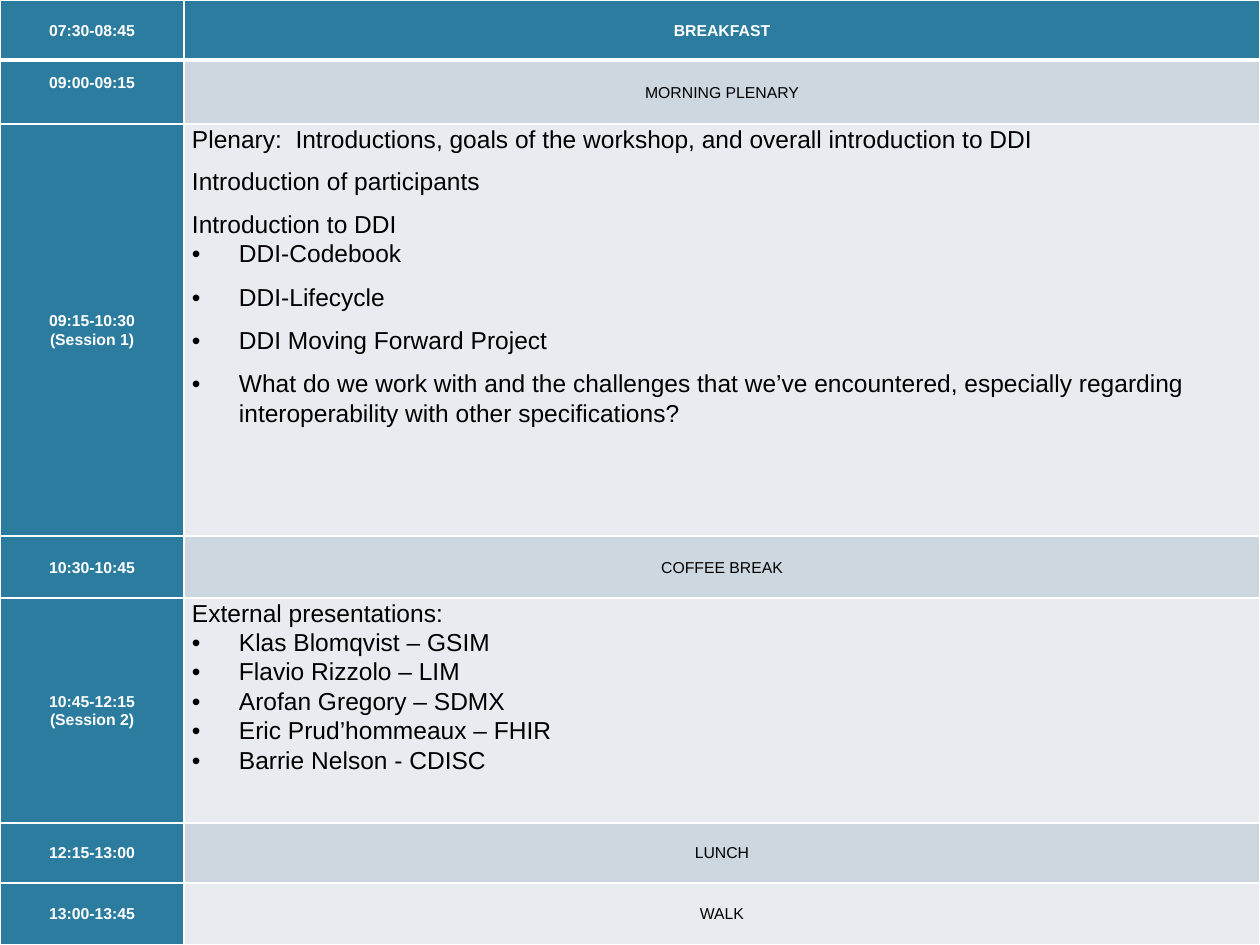
"""Build a one-slide workshop schedule as a two-column table."""
from lxml.etree import SubElement
from pptx import Presentation
from pptx.dml.color import RGBColor
from pptx.enum.text import MSO_ANCHOR, PP_ALIGN
from pptx.oxml.ns import qn
from pptx.util import Pt

PX = 914400 // 126
COLORS = {"teal": "2C7C9F", "band": "CDD7DF", "light": "E8ECF0",
          "white": "FFFFFF", "black": "000000"}


def add_text(tf, text, size=9, color="black", bold=False, align=PP_ALIGN.CENTER,
             before=0, after=0, bullet=False):
    p = tf.paragraphs[0]
    if p.runs:
        p = tf.add_paragraph()
    p.alignment = align
    p.line_spacing = 1.07
    p.space_before, p.space_after = Pt(before), Pt(after)
    if bullet:
        pPr = p._p.get_or_add_pPr()
        pPr.set("marL", str(47 * PX))
        pPr.set("indent", str(-47 * PX))
        SubElement(pPr, qn("a:buFont"), typeface="Arial")
        SubElement(pPr, qn("a:buChar"), char="•")
    r = p.add_run()
    r.text = text
    r.font.name, r.font.size, r.font.bold = "Arial", Pt(size), bold
    r.font.color.rgb = RGBColor.from_string(COLORS[color])


def style_cell(cell, fill, bottom=1):
    cell.margin_left = cell.margin_right = 8 * PX
    cell.margin_top = cell.margin_bottom = 0
    cell.vertical_anchor = MSO_ANCHOR.MIDDLE
    tcPr = cell._tc.get_or_add_tcPr()
    for side, width in (("L", 1), ("R", 1), ("T", 1), ("B", bottom)):
        ln = SubElement(tcPr, qn(f"a:ln{side}"), w=str(Pt(width)))
        SubElement(SubElement(ln, qn("a:solidFill")), qn("a:srgbClr"), val=COLORS["white"])
    cell.fill.solid()
    cell.fill.fore_color.rgb = RGBColor.from_string(COLORS[fill])


rows = [
    (60, ["07:30-08:45"], "BREAKFAST", "teal"),
    (64, ["09:00-09:15"], "MORNING PLENARY", "band"),
    (412, ["09:15-10:30", "(Session 1)"], None, "light"),
    (62, ["10:30-10:45"], "COFFEE BREAK", "band"),
    (225, ["10:45-12:15", "(Session 2)"], None, "light"),
    (60, ["12:15-13:00"], "LUNCH", "band"),
    (62, ["13:00-13:45"], "WALK", "light"),
]
sessions = {
    2: (["Plenary:  Introductions, goals of the workshop, and overall introduction to DDI",
         "Introduction of participants",
         "Introduction to DDI"],
        ["DDI-Codebook",
         "DDI-Lifecycle",
         "DDI Moving Forward Project",
         "What do we work with and the challenges that we’ve encountered, "
         "especially regarding interoperability with other specifications?"],
        7.5, 8),
    4: (["External presentations:"],
        ["Klas Blomqvist – GSIM",
         "Flavio Rizzolo – LIM",
         "Arofan Gregory – SDMX",
         "Eric Prud’hommeaux – FHIR",
         "Barrie Nelson - CDISC"],
        0, 0),
}

prs = Presentation()
prs.slide_width, prs.slide_height = 1260 * PX, 945 * PX
s = prs.slides.add_slide(prs.slide_layouts[6])
table = s.shapes.add_table(len(rows), 2, 0, 0, 1260 * PX, 945 * PX).table
table.horz_banding = False
for col, width in zip(table.columns, (184, 1076)):
    col.width = width * PX

for i, (height, times, title, fill) in enumerate(rows):
    table.rows[i].height = height * PX
    time_cell, cell = table.cell(i, 0), table.cell(i, 1)
    bottom = 3 if i == 0 else 1
    style_cell(time_cell, "teal", bottom)
    style_cell(cell, fill, bottom)
    for text in times:
        add_text(time_cell.text_frame, text, color="white", bold=True)
    if title:
        head = i == 0
        add_text(cell.text_frame, title, color="white" if head else "black", bold=head)
        continue
    cell.vertical_anchor = MSO_ANCHOR.TOP
    topics, bullets, before, after = sessions[i]
    for text in topics:
        add_text(cell.text_frame, text, size=14, align=PP_ALIGN.LEFT, before=before)
    for text in bullets:
        add_text(cell.text_frame, text, size=14, align=PP_ALIGN.LEFT, after=after, bullet=True)

table.cell(1, 0).margin_bottom = 19 * PX
prs.save("out.pptx")
